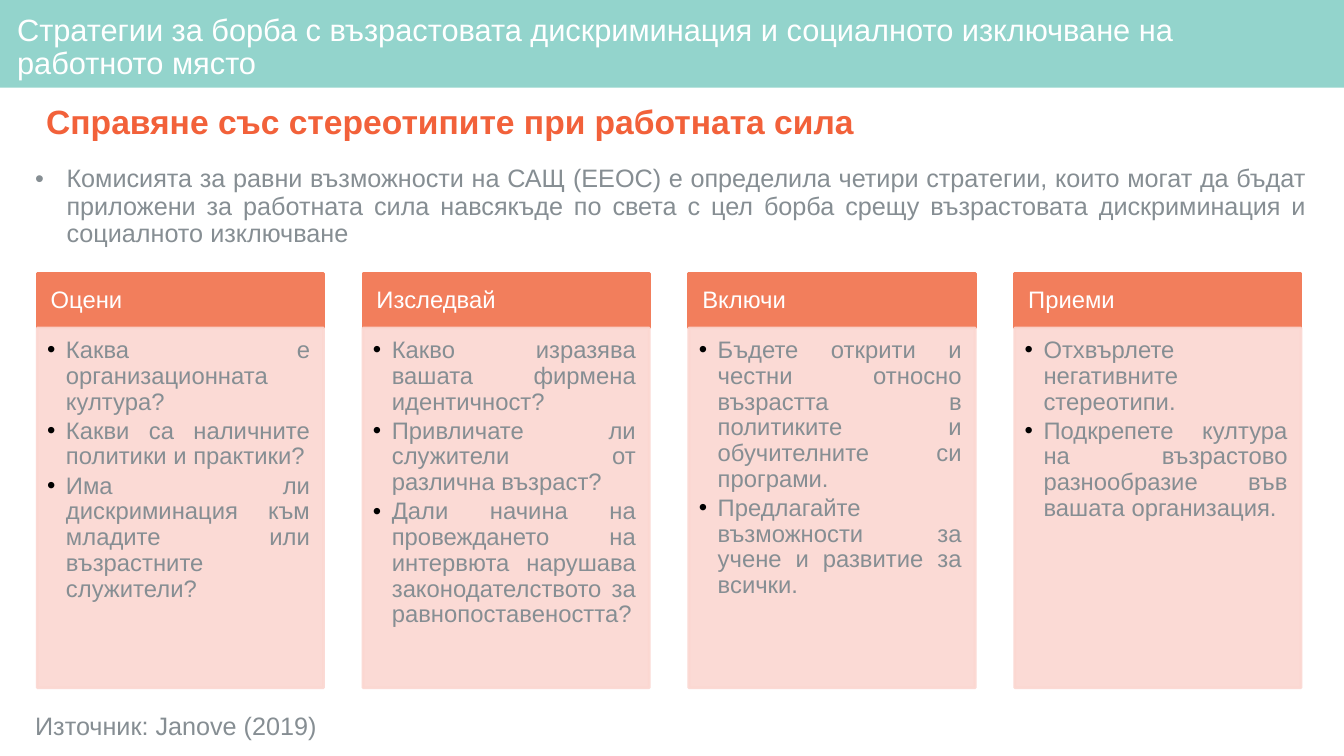
from lxml import etree
from pptx import Presentation
from pptx.dml.color import RGBColor
from pptx.enum.shapes import MSO_SHAPE
from pptx.enum.text import MSO_ANCHOR, PP_ALIGN
from pptx.oxml.ns import qn
from pptx.util import Pt

RECTANGLE = MSO_SHAPE.RECTANGLE
TOP, MIDDLE = MSO_ANCHOR.TOP, MSO_ANCHOR.MIDDLE
LEFT, JUSTIFY = PP_ALIGN.LEFT, PP_ALIGN.JUSTIFY

TITLE = "Стратегии за борба с възрастовата дискриминация и социалното изключване на работното място"
HEADING = "Справяне със стереотипите при работната сила"
INTRO = ("Комисията за равни възможности на САЩ (EEOC) е определила четири стратегии, които могат "
         "да бъдат приложени за работната сила навсякъде по света с цел борба срещу възрастовата "
         "дискриминация и социалното изключване")
SOURCE = "Източник: Janove (2019)"
STRATEGIES = [
    ("Оцени", ["Каква е организационната култура?",
               "Какви са наличните политики и практики?",
               "Има ли дискриминация към младите или възрастните служители?"]),
    ("Изследвай", ["Какво изразява вашата фирмена идентичност?",
                   "Привличате ли служители от различна възраст?",
                   "Дали начина на провеждането на интервюта нарушава законодателството за "
                   "равнопоставеността?"]),
    ("Включи", ["Бъдете открити и честни относно възрастта в политиките и обучителните си програми.",
                "Предлагайте възможности за учене и развитие за всички."]),
    ("Приеми", ["Отхвърлете негативните стереотипи.",
                "Подкрепете култура на възрастово разнообразие във вашата организация."]),
]

WHITE, GREY, BLACK = "FFFFFF", "868E93", "000000"
TEAL, ORANGE, CORAL, PINK = "93D4CC", "F2613A", "F27E5C", "FBD7D1"
SLIDE_WIDTH, SLIDE_HEIGHT = 960, 540
COLUMN_LEFT, COLUMN_WIDTH, COLUMN_STEP = 26.6, 204.5, 232.75
HEADER_TOP, HEADER_HEIGHT, LIST_HEIGHT = 195.6, 38.7, 257


def color(hex_code):
    return RGBColor.from_string(hex_code)


def add_block(page, frame, fill, border=0, opacity=100):
    block = page.shapes.add_shape(RECTANGLE, *map(Pt, frame))
    block.shadow.inherit = False
    block.fill.solid()
    block.fill.fore_color.rgb = color(fill)
    if border:
        block.line.color.rgb = color(fill)
        block.line.width = Pt(border)
    else:
        block.line.fill.background()
    if opacity < 100:
        for tint in block._element.spPr.iter(qn("a:srgbClr")):
            etree.SubElement(tint, qn("a:alpha"), val=str(opacity * 1000))
    return block


def add_text_box(page, frame):
    return page.shapes.add_textbox(*map(Pt, frame))


def add_bullet(para, hanging, bullet_color):
    properties = para._p.get_or_add_pPr()
    properties.set("marL", str(Pt(hanging[0])))
    properties.set("indent", str(Pt(hanging[1])))
    tint = etree.SubElement(properties, qn("a:buClr"))
    etree.SubElement(tint, qn("a:srgbClr"), val=bullet_color)
    etree.SubElement(properties, qn("a:buFont"), typeface="Arial")
    etree.SubElement(properties, qn("a:buChar"), char="•")


def write(box, lines, size, ink, insets=(7.2, 3.6, 7.2, 3.6), anchor=TOP, align=JUSTIFY,
          bold=False, gap=0, hanging=None, bullet_color=BLACK):
    frame = box.text_frame
    frame.word_wrap = True
    frame.vertical_anchor = anchor
    frame.margin_left, frame.margin_top, frame.margin_right, frame.margin_bottom = map(Pt, insets)
    frame.text = "\n".join(lines)
    for index, para in enumerate(frame.paragraphs):
        para.alignment = align
        para.line_spacing = 0.9
        para.space_before = Pt(gap if index else 0)
        if hanging:
            add_bullet(para, hanging, bullet_color)
        for span in para.runs:
            span.font.name = "Arial"
            span.font.size = Pt(size)
            span.font.bold = bold
            span.font.color.rgb = color(ink)


def add_strategy(page, left, name, points):
    header = add_block(page, (left, HEADER_TOP, COLUMN_WIDTH, HEADER_HEIGHT), CORAL, border=2)
    write(header, [name], 17, WHITE, insets=(9.6, 5.5, 9.6, 5.5), anchor=MIDDLE)
    list_top = HEADER_TOP + HEADER_HEIGHT
    panel = add_block(page, (left, list_top, COLUMN_WIDTH, LIST_HEIGHT), PINK, border=2, opacity=90)
    write(panel, points, 17, GREY, insets=(7.2, 7.2, 9.6, 10.8), gap=2.5, hanging=(13.5, -13.5))


def main():
    """Build the slide on strategies against age discrimination at work."""
    deck = Presentation()
    deck.slide_width, deck.slide_height = Pt(SLIDE_WIDTH), Pt(SLIDE_HEIGHT)
    page = deck.slides.add_slide(deck.slide_layouts[6])

    add_block(page, (0, 0, SLIDE_WIDTH, 62.7), TEAL)
    write(add_text_box(page, (7.9, 6.5, 940, 56)), [TITLE], 22, WHITE,
          insets=(4.3, 4.3, 4.3, 4.3), anchor=MIDDLE, align=LEFT)
    write(add_text_box(page, (25.9, 67, 922, 43)), [HEADING], 24, ORANGE, anchor=MIDDLE, bold=True)
    write(add_text_box(page, (0, 115.2, 940.3, 66)), [INTRO], 18, GREY,
          hanging=(40.5, -22.5), bullet_color=GREY)
    for index, (name, points) in enumerate(STRATEGIES):
        add_strategy(page, COLUMN_LEFT + index * COLUMN_STEP, name, points)
    write(add_text_box(page, (18, 506, 400, 28)), [SOURCE], 18, GREY, align=LEFT)

    deck.save("out.pptx")


if __name__ == "__main__":
    main()
